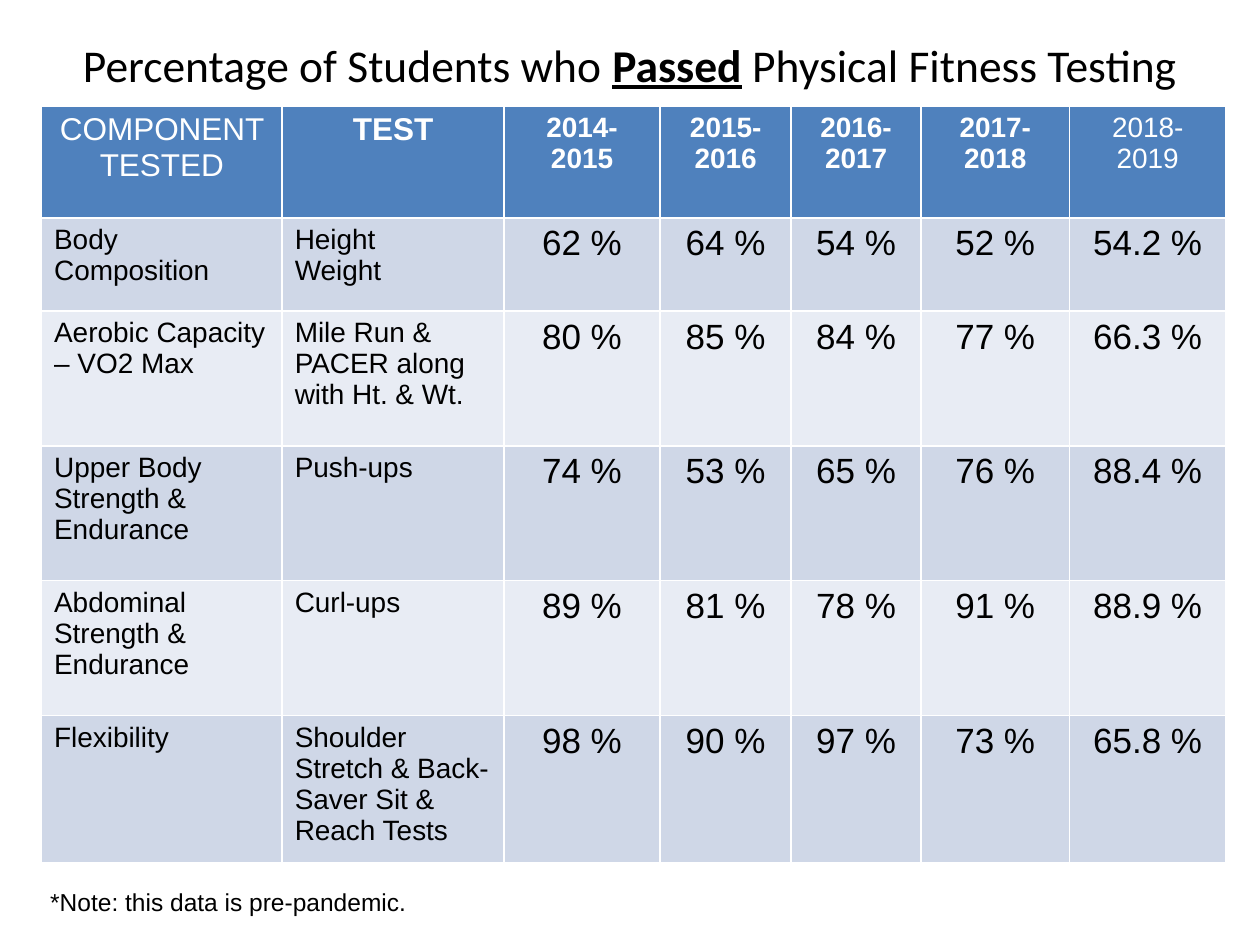
from pptx import Presentation
from pptx.dml.color import RGBColor
from pptx.enum.text import MSO_ANCHOR, PP_ALIGN
from pptx.util import Inches, Pt

TITLE = [("Percentage of Students who ", False), ("Passed", True), (" Physical Fitness Testing", False)]
NOTE = "*Note: this data is pre-pandemic."
HEADERS = [
    ("COMPONENT TESTED", 18, False),
    ("TEST", 18, True),
    ("2014-2015", 16, True),
    ("2015-2016", 16, True),
    ("2016-2017", 16, True),
    ("2017-2018", 16, True),
    ("2018-2019", 16, False),
]
RESULTS = [
    ("Body Composition", "Height\nWeight", "62", "64", "54", "52", "54.2"),
    ("Aerobic Capacity – VO2 Max", "Mile Run & PACER along with Ht. & Wt.", "80", "85", "84", "77", "66.3"),
    ("Upper Body Strength & Endurance", "Push-ups", "74", "53", "65", "76", "88.4"),
    ("Abdominal Strength & Endurance", "Curl-ups", "89", "81", "78", "91", "88.9"),
    ("Flexibility", "Shoulder Stretch & Back-Saver Sit & Reach Tests", "98", "90", "97", "73", "65.8"),
]
COLUMN_WIDTHS = [1.91, 1.76, 1.24, 1.04, 1.03, 1.18, 1.24]
ROW_HEIGHTS = [0.89, 0.74, 1.07, 1.07, 1.07, 1.07]
HEADER_FILL = "4F81BD"
BAND_FILLS = ["CFD7E7", "E8ECF4"]
LABEL_COLUMNS = 2


def color(value):
    return RGBColor.from_string(value)


def style(paragraph, size, font="Arial", text_color="000000", bold=False, align=PP_ALIGN.LEFT):
    paragraph.alignment = align
    paragraph.font.name = font
    paragraph.font.size = Pt(size)
    paragraph.font.bold = bold
    paragraph.font.color.rgb = color(text_color)


def add_text_box(slide, left, top, width, height):
    frame = slide.shapes.add_textbox(Inches(left), Inches(top), Inches(width), Inches(height)).text_frame
    frame.word_wrap = True
    return frame


def fill_cell(cell, text, fill, size, **options):
    cell.fill.solid()
    cell.fill.fore_color.rgb = color(fill)
    cell.text = text
    for paragraph in cell.text_frame.paragraphs:
        style(paragraph, size, **options)


def add_title(slide):
    frame = add_text_box(slide, 0.5, 0.18, 9, 0.66)
    frame.vertical_anchor = MSO_ANCHOR.MIDDLE
    paragraph = frame.paragraphs[0]
    style(paragraph, 26, font="Calibri", align=PP_ALIGN.CENTER)
    for text, emphasized in TITLE:
        run = paragraph.add_run()
        run.text = text
        if emphasized:
            run.font.bold = True
            run.font.underline = True


def add_results_table(slide):
    table = slide.shapes.add_table(
        len(ROW_HEIGHTS), len(COLUMN_WIDTHS), Inches(0.33), Inches(0.84),
        Inches(sum(COLUMN_WIDTHS)), Inches(sum(ROW_HEIGHTS)),
    ).table
    for column, width in zip(table.columns, COLUMN_WIDTHS):
        column.width = Inches(width)
    for row, height in zip(table.rows, ROW_HEIGHTS):
        row.height = Inches(height)

    for column, (text, size, bold) in enumerate(HEADERS):
        fill_cell(table.cell(0, column), text, HEADER_FILL, size,
                  text_color="FFFFFF", bold=bold, align=PP_ALIGN.CENTER)
    for row, result in enumerate(RESULTS):
        fill = BAND_FILLS[row % len(BAND_FILLS)]
        for column, text in enumerate(result):
            cell = table.cell(row + 1, column)
            if column < LABEL_COLUMNS:
                fill_cell(cell, text, fill, 16)
            else:
                fill_cell(cell, f"{text} %", fill, 20, align=PP_ALIGN.CENTER)


def add_note(slide):
    paragraph = add_text_box(slide, 0.3, 6.99, 9.39, 0.34).paragraphs[0]
    paragraph.text = NOTE
    style(paragraph, 14)


def main():
    presentation = Presentation()
    presentation.slide_width = Inches(10)
    presentation.slide_height = Inches(7.5)
    slide = presentation.slides.add_slide(presentation.slide_layouts[6])
    add_title(slide)
    add_results_table(slide)
    add_note(slide)
    presentation.save("out.pptx")


if __name__ == "__main__":
    main()
